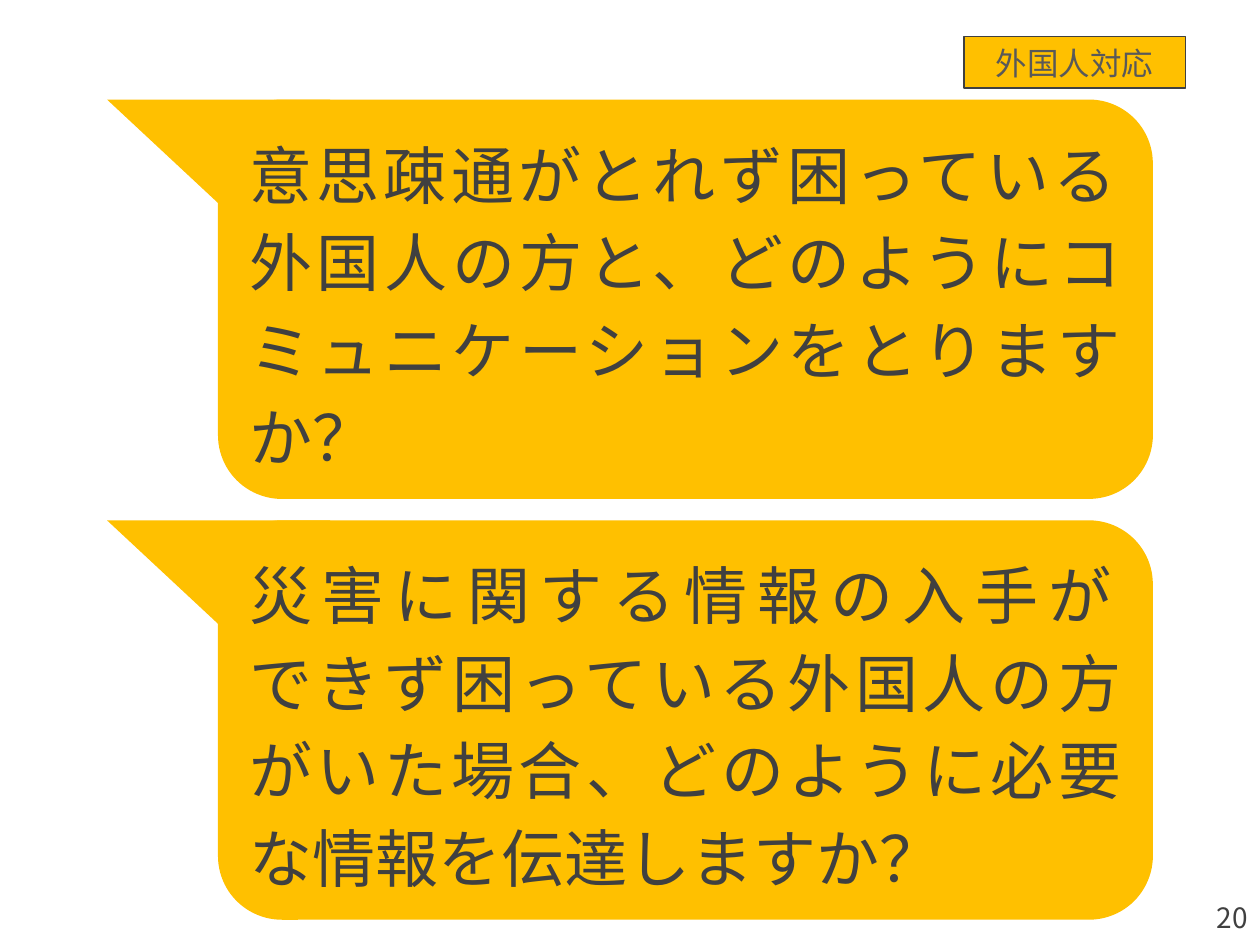
from lxml import etree
from pptx import Presentation, util as u
from pptx.dml.color import RGBColor
from pptx.enum import shapes, text
from pptx.oxml.ns import qn

FONT = "Noto Sans CJK JP"
YELLOW = "FFC000"
DARK = "404040"


def rgb(value):
    return RGBColor.from_string(value)


def write(sp, content, size, color=DARK, align=text.PP_ALIGN.LEFT,
          anchor=text.MSO_ANCHOR.MIDDLE, line=None, after=None):
    tf = sp.text_frame
    tf.word_wrap = True
    tf.vertical_anchor = anchor
    p = tf.paragraphs[0]
    p.alignment = align
    if line:
        p.line_spacing = u.Pt(line)
    if after:
        p.space_after = u.Pt(after)
    for i, part in enumerate(content.split("\n")):
        if i:
            p.add_line_break()
        r = p.add_run()
        r.text = part
        r.font.size = u.Pt(size)
        r.font.name = FONT
        r.font.color.rgb = rgb(color)
        etree.SubElement(r.font._element, qn("a:ea")).set("typeface", FONT)


prs = Presentation()
prs.slide_width = u.Inches(10)
prs.slide_height = u.Inches(7.5)
s = prs.slides.add_slide(prs.slide_layouts[6])

number = s.shapes.add_textbox(u.Inches(7.75), u.Inches(7.1), u.Inches(2.25), u.Inches(0.4))
write(number, "20", 16, align=text.PP_ALIGN.RIGHT, anchor=text.MSO_ANCHOR.TOP)

questions = [
    (0.79, "意思疎通がとれず困っている\n外国人の方と、どのようにコミュニケーションをとりますか？"),
    (4.13, "災害に関する情報の入手が\nできず困っている外国人の方がいた場合、どのように必要な情報を伝達しますか？"),
]
for top, question in questions:
    group = s.shapes.add_group_shape()
    tail = group.shapes.add_shape(shapes.MSO_SHAPE.RIGHT_TRIANGLE, u.Inches(0.85),
                                  u.Inches(top), u.Inches(1.77), u.Inches(1.65))
    xfrm = tail._element.spPr.find(qn("a:xfrm"))
    xfrm.set("flipH", "1")
    xfrm.set("flipV", "1")
    bubble = group.shapes.add_shape(shapes.MSO_SHAPE.ROUNDED_RECTANGLE, u.Inches(1.73),
                                    u.Inches(top), u.Inches(7.42), u.Inches(3.17))
    bubble.adjustments[0] = 0.16
    for sp in (tail, bubble):
        sp.shadow.inherit = False
        sp.fill.solid()
        sp.fill.fore_color.rgb = rgb(YELLOW)
        sp.line.fill.background()
    write(bubble, question, 36, align=text.PP_ALIGN.JUSTIFY, line=50, after=12)

label = s.shapes.add_shape(shapes.MSO_SHAPE.RECTANGLE, u.Inches(7.65), u.Inches(0.29),
                           u.Inches(1.76), u.Inches(0.41))
label.shadow.inherit = False
label.fill.solid()
label.fill.fore_color.rgb = rgb(YELLOW)
label.line.color.rgb = rgb(DARK)
label.line.width = u.Pt(1)
write(label, "外国人対応", 18, color="595959", align=text.PP_ALIGN.CENTER)

prs.save("out.pptx")
